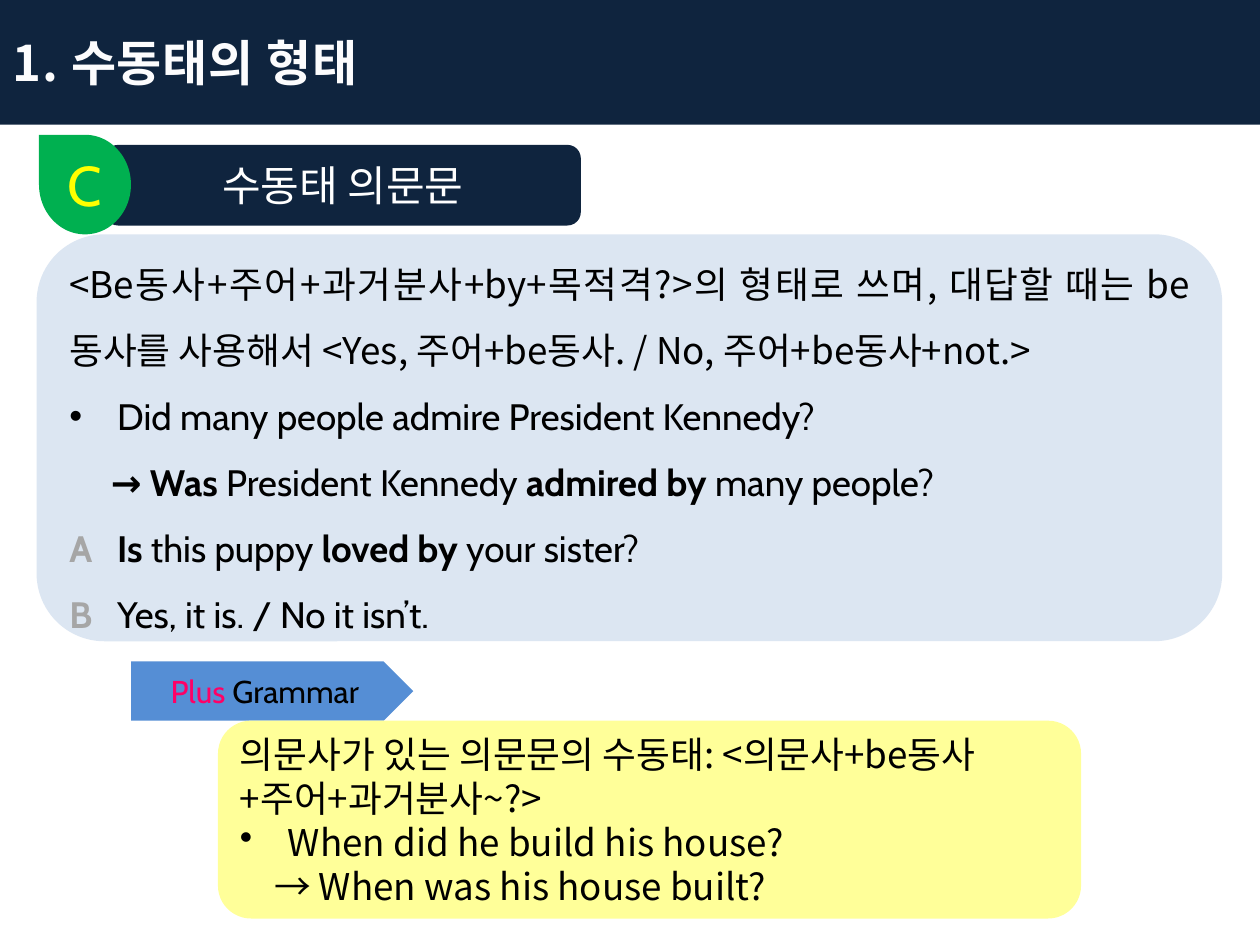
import pptx
import pptx.util
import pptx.dml.color
import pptx.enum.shapes
import pptx.enum.text
import pptx.oxml.ns
from lxml import etree

Inches, Pt = pptx.util.Inches, pptx.util.Pt
SHAPE = pptx.enum.shapes.MSO_SHAPE
ALIGN = pptx.enum.text.PP_ALIGN
MIDDLE = pptx.enum.text.MSO_ANCHOR.MIDDLE

NAVY, GRAY, BLACK = "0F243E", "A6A6A6", "000000"
KOREAN, LATIN = "Noto Sans CJK KR", "Cabin"
HANG = 0.38


def rgb(value):
    return pptx.dml.color.RGBColor.from_string(value)


class Deck:
    """Holds the presentation, its current slide and the shared text style."""

    def __init__(self, width, height):
        self.prs = pptx.Presentation()
        self.prs.slide_width, self.prs.slide_height = Inches(width), Inches(height)
        self.s = self.prs.slides.add_slide(self.prs.slide_layouts[1])

    def place(self, sp, left, top, width, height):
        sp.left, sp.top = Inches(left), Inches(top)
        sp.width, sp.height = Inches(width), Inches(height)

    def shape(self, kind, box, fill, rotation=0):
        sp = self.s.shapes.add_shape(kind, *map(Inches, box))
        sp.shadow.inherit = False
        sp.fill.solid()
        sp.fill.fore_color.rgb = rgb(fill)
        sp.line.fill.background()
        sp.rotation = rotation
        return sp

    def panel(self, box, fill):
        """Rounded panel drawn behind the placeholders."""
        sp = self.shape(SHAPE.FLOWCHART_ALTERNATE_PROCESS, box, fill)
        self.s.shapes._spTree.insert(2, sp._element)

    def frame(self, sp, side=0.1, end=0.05):
        tf = sp.text_frame
        tf.word_wrap = True
        tf.auto_size = pptx.enum.text.MSO_AUTO_SIZE.NONE
        tf.vertical_anchor = MIDDLE
        tf.margin_left = tf.margin_right = Inches(side)
        tf.margin_top = tf.margin_bottom = Inches(end)
        return tf

    def paragraph(self, tf, runs, size, font=KOREAN, color=BLACK, align=ALIGN.LEFT,
                  spacing=1.0, margin=0, hang=0, bullet=None, bold=False):
        """Add a paragraph; each run is (text, bold or None, colour or None)."""
        p = tf.paragraphs[0] if not tf.text else tf.add_paragraph()
        p.alignment, p.line_spacing = align, spacing
        p.space_before = Pt(0)
        p.font.size, p.font.name, p.font.bold = Pt(size), font, bold
        p.font.color.rgb = rgb(color)
        pPr = p._p.get_or_add_pPr()
        pPr.set("marL", str(Inches(margin)))
        pPr.set("indent", str(-Inches(hang)))
        qn = pptx.oxml.ns.qn
        defaults = pPr.find(qn("a:defRPr"))
        etree.SubElement(defaults, qn("a:ea")).set("typeface", KOREAN)
        mark = etree.Element(qn("a:buChar" if bullet else "a:buNone"))
        if bullet:
            mark.set("char", bullet)
        defaults.addprevious(mark)
        for text, run_bold, run_color in runs:
            r = p.add_run()
            r.text = text
            if run_bold is not None:
                r.font.bold = run_bold
            if run_color:
                r.font.color.rgb = rgb(run_color)
        return p

    def title(self, text, box):
        sp = self.s.shapes.title
        self.place(sp, *box)
        sp.fill.solid()
        sp.fill.fore_color.rgb = rgb(NAVY)
        p = self.paragraph(self.frame(sp), [(text, None, None)], 28,
                           color="FCFCFD", bold=True)
        p._p.pPr.find(pptx.oxml.ns.qn("a:defRPr")).set("spc", "50")

    def body(self, box, items):
        sp = self.s.placeholders[1]
        self.place(sp, *box)
        tf = self.frame(sp, side=0.26, end=0)
        for runs, style in items:
            self.paragraph(tf, runs, 21, align=ALIGN.JUSTIFY, spacing=1.5, **style)

    def label(self, kind, box, fill, runs, size, **style):
        tf = self.frame(self.shape(kind, box, fill))
        self.paragraph(tf, runs, size, align=ALIGN.CENTER, **style)

    def note(self, box, fill, items):
        tf = self.frame(self.shape(SHAPE.FLOWCHART_ALTERNATE_PROCESS, box, fill))
        for text, style in items:
            self.paragraph(tf, [(text, None, None)], 21, **style)

    def letter(self, text, box, color):
        tf = self.frame(self.s.shapes.add_textbox(*map(Inches, box)))
        self.paragraph(tf, [(text, None, None)], 32, font=LATIN, color=color)


def main():
    deck = Deck(10, 7.5)
    deck.title("1. 수동태의 형태", (0, 0, 10, 0.99))

    rule_box = (0.29, 1.86, 9.41, 3.23)
    bulleted = dict(margin=HANG, hang=HANG, bullet="•")
    speaker = dict(font=LATIN, margin=HANG, hang=HANG)
    deck.panel(rule_box, "DCE6F2")
    deck.body(rule_box, [
        ([("<Be동사+주어+과거분사+by+목적격?>의 형태로 쓰며, 대답할 때는 "
           "be동사를 사용해서 <Yes, 주어+be동사. / No, 주어+be동사+not.>", None, None)], {}),
        ([("Did many people admire President Kennedy?", None, None)],
         dict(font=LATIN, **bulleted)),
        ([("→ Was", True, None), (" President Kennedy ", None, None),
          ("admired by ", True, None), ("many people?", None, None)],
         dict(font=LATIN, margin=0.33)),
        ([("A\t", True, GRAY), ("Is", True, None), (" this puppy ", None, None),
          ("loved by ", True, None), ("your sister?", None, None)], speaker),
        ([("B\t", True, GRAY), ("Yes, it is. / No it isn’t.", None, None)], speaker),
    ])

    deck.label(SHAPE.FLOWCHART_ALTERNATE_PROCESS, (0.83, 1.15, 3.78, 0.64), NAVY,
               [("수동태 의문문", None, None)], 24, color="FFFFFF")
    deck.shape(SHAPE.TEAR, (0.28, 1.1, 0.79, 0.73), "00B050", rotation=270)
    deck.letter("C", (0.44, 1.14, 0.47, 0.64), "FFFF00")

    deck.label(SHAPE.PENTAGON, (1.04, 5.25, 2.24, 0.47), "558ED5",
               [("Plus ", None, "FF0066"), ("Grammar", None, None)], 18, font=LATIN)
    deck.note((1.73, 5.72, 6.85, 1.57), "FFFF99", [
        ("의문사가 있는 의문문의 수동태: <의문사+be동사+주어+과거분사~?>", {}),
        ("When did he build his house?", bulleted),
        ("→ When was his house built?", dict(margin=0.27)),
    ])
    deck.prs.save("out.pptx")


if __name__ == "__main__":
    main()
